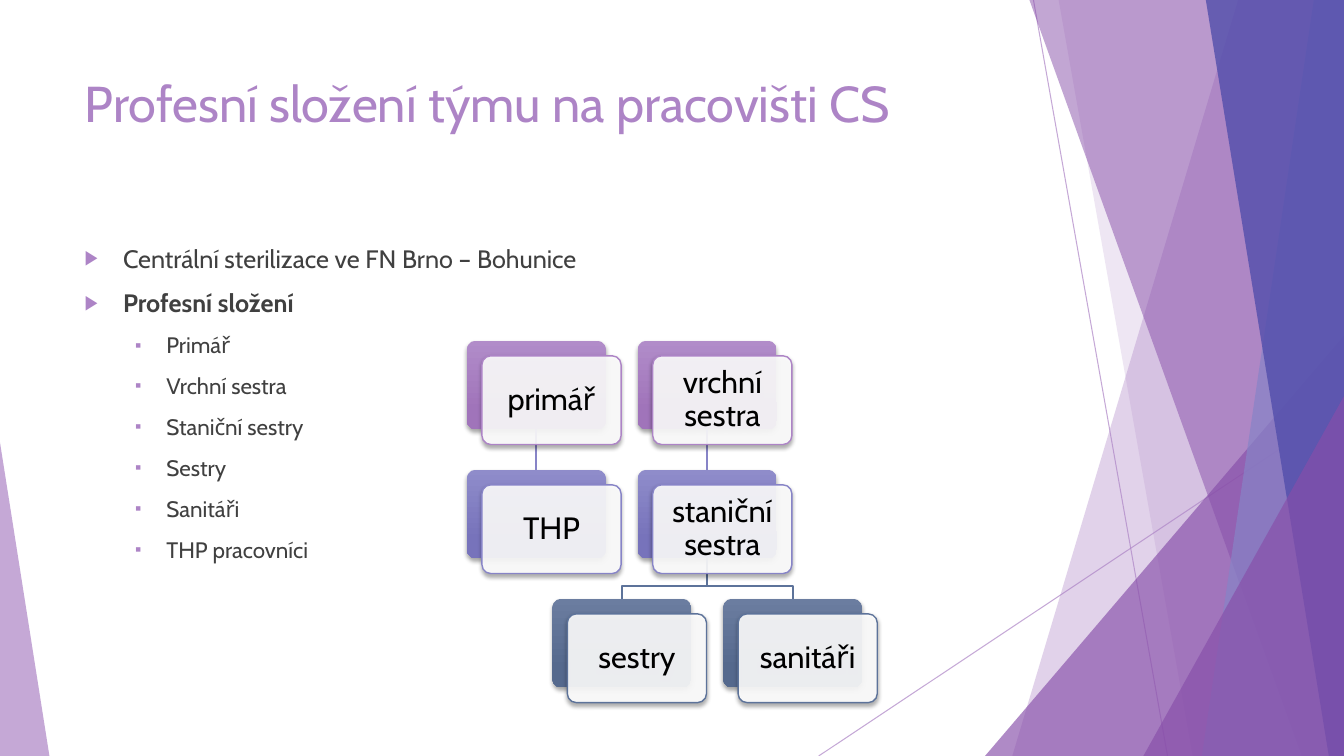
from lxml import etree
from pptx import Presentation
from pptx.dml.color import RGBColor
from pptx.enum.shapes import MSO_CONNECTOR as Connector, MSO_SHAPE as Shape
from pptx.enum.text import MSO_ANCHOR as Anchor, MSO_AUTO_SIZE as AutoSize, PP_ALIGN as Align
from pptx.oxml.ns import qn
from pptx.util import Inches, Pt

FONT = "Cabin"
LILAC = RGBColor(0xAD, 0x84, 0xC6)
PURPLE = RGBColor(0x87, 0x4E, 0xA9)
PERIWINKLE = RGBColor(0x87, 0x84, 0xC7)
INDIGO = RGBColor(0x52, 0x4E, 0xAB)
SLATE = RGBColor(0x5D, 0x73, 0x9A)
GREY = RGBColor(0x40, 0x40, 0x40)
WHITE = RGBColor(0xFF, 0xFF, 0xFF)
BLACK = RGBColor(0, 0, 0)

WIDTH, HEIGHT = 13.33, 7.5
CARD_WIDTH, CARD_HEIGHT, CARD_OFFSET = 1.38, 0.88, 0.15
CHART_LEFT, CHART_TOP = 4.63, 3.38
HALF_COLUMN, ROW_STEP = 0.847, 1.28

# Per level of the chart: outline, gradient start, gradient end
LEVELS = [
    (LILAC, RGBColor(0xB1, 0x8C, 0xC9), RGBColor(0xA0, 0x74, 0xBA)),
    (PERIWINKLE, RGBColor(0x8F, 0x8C, 0xCA), RGBColor(0x77, 0x73, 0xBB)),
    (SLATE, RGBColor(0x6B, 0x7D, 0xA0), RGBColor(0x55, 0x69, 0x8D)),
]
# Role, half-column, level
ROLES = [
    ("primář", 0, 0), ("THP", 0, 1),
    ("vrchní sestra", 2, 0), ("staniční sestra", 2, 1),
    ("sestry", 1, 2), ("sanitáři", 3, 2),
]
DIRECT_LINKS = [("primář", "THP"), ("vrchní sestra", "staniční sestra")]
MAIN_POINTS = [("Centrální sterilizace ve FN Brno – Bohunice", False), ("Profesní složení", True)]
TEAM = ["Primář", "Vrchní sestra", "Staniční sestry", "Sestry", "Sanitáři", "THP pracovníci"]


def set_all(target, values):
    for name, value in values.items():
        setattr(target, name, value)


def set_opacity(shape, percent):
    """Apply alpha to the first colour of the shape: its fill, or a connector's line."""
    colour = next(shape._element.spPr.iter(qn("a:srgbClr")))
    etree.SubElement(colour, qn("a:alpha"), val=str(percent * 1000))


def paint(shape, colour, opacity):
    shape.fill.solid()
    shape.fill.fore_color.rgb = colour
    set_opacity(shape, opacity)
    shape.line.fill.background()
    shape.shadow.inherit = False


def add_band(page, points, colour, opacity):
    start, *rest = [(Inches(x), Inches(y)) for x, y in points]
    builder = page.shapes.build_freeform(*start)
    builder.add_line_segments(rest, close=True)
    paint(builder.convert_to_shape(), colour, opacity)


def add_wedge(page, left, top, width, peak, colour, opacity):
    """Add a triangle standing on the slide's bottom edge, its peak at 0 (left) to 1 (right)."""
    wedge = page.shapes.add_shape(Shape.ISOSCELES_TRIANGLE, Inches(left), Inches(top),
                                  Inches(width), Inches(HEIGHT - top))
    wedge.adjustments[0] = peak
    paint(wedge, colour, opacity)


def add_line(page, start, end, colour, width):
    line = page.shapes.add_connector(Connector.STRAIGHT, *[Inches(v) for v in (*start, *end)])
    line.line.color.rgb = colour
    line.line.width = Pt(width)
    etree.SubElement(line._element.spPr, qn("a:effectLst"))
    return line


def add_decoration(page):
    for start, end in [((10.25, 0), (11.58, HEIGHT)), ((WIDTH, 4.03), (8.12, HEIGHT))]:
        set_opacity(add_line(page, start, end, LILAC, 0.75), 70)

    def add_right_band(top_x, bottom_x, colour, opacity):
        add_band(page, [(top_x, 0), (WIDTH, 0), (WIDTH, HEIGHT), (bottom_x, HEIGHT)], colour, opacity)

    add_right_band(12.28, 10.04, LILAC, 36)
    add_right_band(10.5, 11.83, LILAC, 20)
    add_wedge(page, 9.77, 3.33, 3.56, 1, PURPLE, 66)
    add_right_band(10.21, 12.91, PURPLE, 50)
    add_right_band(13.03, 11.92, PERIWINKLE, 70)
    add_right_band(11.96, 13.18, INDIGO, 80)
    add_wedge(page, 11.34, 3.93, 1.99, 1, PURPLE, 66)
    add_wedge(page, 0, 4.39, 0.49, 0, LILAC, 70)


def place(box, left, top, width, height):
    set_all(box, {"left": Inches(left), "top": Inches(top),
                  "width": Inches(width), "height": Inches(height)})
    set_all(box.text_frame, {"word_wrap": True, "auto_size": AutoSize.NONE,
                             "vertical_anchor": Anchor.TOP})


def write(para, text, size, colour, bold=False):
    span = para.add_run()
    span.text = text
    set_all(span.font, {"name": FONT, "size": Pt(size), "bold": bold})
    span.font.color.rgb = colour


def set_bullet(para, symbol, margin, hanging):
    props = para._p.get_or_add_pPr()
    props.set("marL", str(Inches(margin)))
    props.set("indent", str(-Inches(hanging)))
    colour = etree.SubElement(props, qn("a:buClr"))
    etree.SubElement(colour, qn("a:srgbClr"), val=str(LILAC))
    etree.SubElement(props, qn("a:buSzPct"), val="80000")
    etree.SubElement(props, qn("a:buFont"), typeface="Arial")
    etree.SubElement(props, qn("a:buChar"), char=symbol)


def add_title(page, text):
    title = page.shapes.title
    place(title, 0.74, 0.67, 9.4, 1.44)
    para = title.text_frame.paragraphs[0]
    para.alignment = Align.LEFT
    write(para, text, 36, LILAC)


def add_outline(page):
    body = page.placeholders[1]
    place(body, 0.74, 2.36, 9.4, 4.24)
    frame = body.text_frame
    items = [(text, bold, 0) for text, bold in MAIN_POINTS] + [(text, False, 1) for text in TEAM]
    for index, (text, bold, level) in enumerate(items):
        para = frame.add_paragraph() if index else frame.paragraphs[0]
        set_all(para, {"level": level, "space_before": Pt(10), "alignment": Align.LEFT})
        set_bullet(para, *[("▶", 0.38, 0.38), ("▪", 0.81, 0.31)][level])
        write(para, text, 16 if level else 18, GREY, bold)


def card_origin(column, level):
    return CHART_LEFT + column * HALF_COLUMN, CHART_TOP + level * ROW_STEP


def add_card(page, left, top):
    card = page.shapes.add_shape(Shape.ROUNDED_RECTANGLE, Inches(left), Inches(top),
                                 Inches(CARD_WIDTH), Inches(CARD_HEIGHT))
    card.adjustments[0] = 0.1
    return card


def add_shadow(shape):
    shape.shadow.inherit = False
    effects = shape._element.spPr.find(qn("a:effectLst"))
    shadow = etree.SubElement(effects, qn("a:outerShdw"), blurRad=str(Pt(3)), dist=str(Pt(2)),
                              dir="5400000", rotWithShape="0")
    colour = etree.SubElement(shadow, qn("a:srgbClr"), val=str(BLACK))
    etree.SubElement(colour, qn("a:alpha"), val="35000")


def add_back_card(page, column, level):
    card = add_card(page, *card_origin(column, level))
    card.fill.gradient()
    card.fill.gradient_angle = 270
    for stop, colour, position in zip(card.fill.gradient_stops, LEVELS[level][1:], (0, 0.78)):
        stop.color.rgb = colour
        stop.position = position
    card.line.fill.background()
    add_shadow(card)
    return card


def add_front_card(page, role, column, level):
    left, top = card_origin(column, level)
    card = add_card(page, left + CARD_OFFSET, top + CARD_OFFSET)
    paint(card, WHITE, 90)
    card.line.color.rgb = LEVELS[level][0]
    card.line.width = Pt(1)
    add_shadow(card)
    margins = {f"margin_{side}": Inches(0.11) for side in ("left", "right", "top", "bottom")}
    set_all(card.text_frame, {"word_wrap": True, "vertical_anchor": Anchor.MIDDLE, **margins})
    para = card.text_frame.paragraphs[0]
    set_all(para, {"alignment": Align.CENTER, "line_spacing": 0.9})
    write(para, role, 22, BLACK)


def add_fork(page, parent, children):
    """Draw a stem below the parent card that branches to two child cards."""
    stem_x, stem_y = parent.left + parent.width // 2, parent.top + parent.height
    (left_x, child_y), (right_x, _) = [(c.left + c.width // 2, c.top) for c in children]
    bar_y = child_y - Inches(0.13)
    builder = page.shapes.build_freeform(stem_x, stem_y)
    builder.add_line_segments([(stem_x, bar_y)], close=False)
    builder.move_to(left_x, child_y)
    builder.add_line_segments([(left_x, bar_y), (right_x, bar_y), (right_x, child_y)], close=False)
    fork = builder.convert_to_shape()
    fork.fill.background()
    fork.line.color.rgb = SLATE
    fork.line.width = Pt(1.5)
    fork.shadow.inherit = False


def add_team_chart(page):
    backs = {role: add_back_card(page, column, level) for role, column, level in ROLES}
    for upper, lower in DIRECT_LINKS:
        link = add_line(page, (0, 0), (1, 1), PERIWINKLE, 1.5)
        link.begin_connect(backs[upper], 2)
        link.end_connect(backs[lower], 0)
    add_fork(page, backs["staniční sestra"], [backs["sestry"], backs["sanitáři"]])
    for role, column, level in ROLES:
        add_front_card(page, role, column, level)


def main():
    deck = Presentation()
    set_all(deck, {"slide_width": Inches(WIDTH), "slide_height": Inches(HEIGHT)})
    page = deck.slides.add_slide(deck.slide_layouts[1])
    add_decoration(page)
    add_title(page, "Profesní složení týmu na pracovišti CS")
    add_outline(page)
    add_team_chart(page)
    deck.save("out.pptx")


if __name__ == "__main__":
    main()
